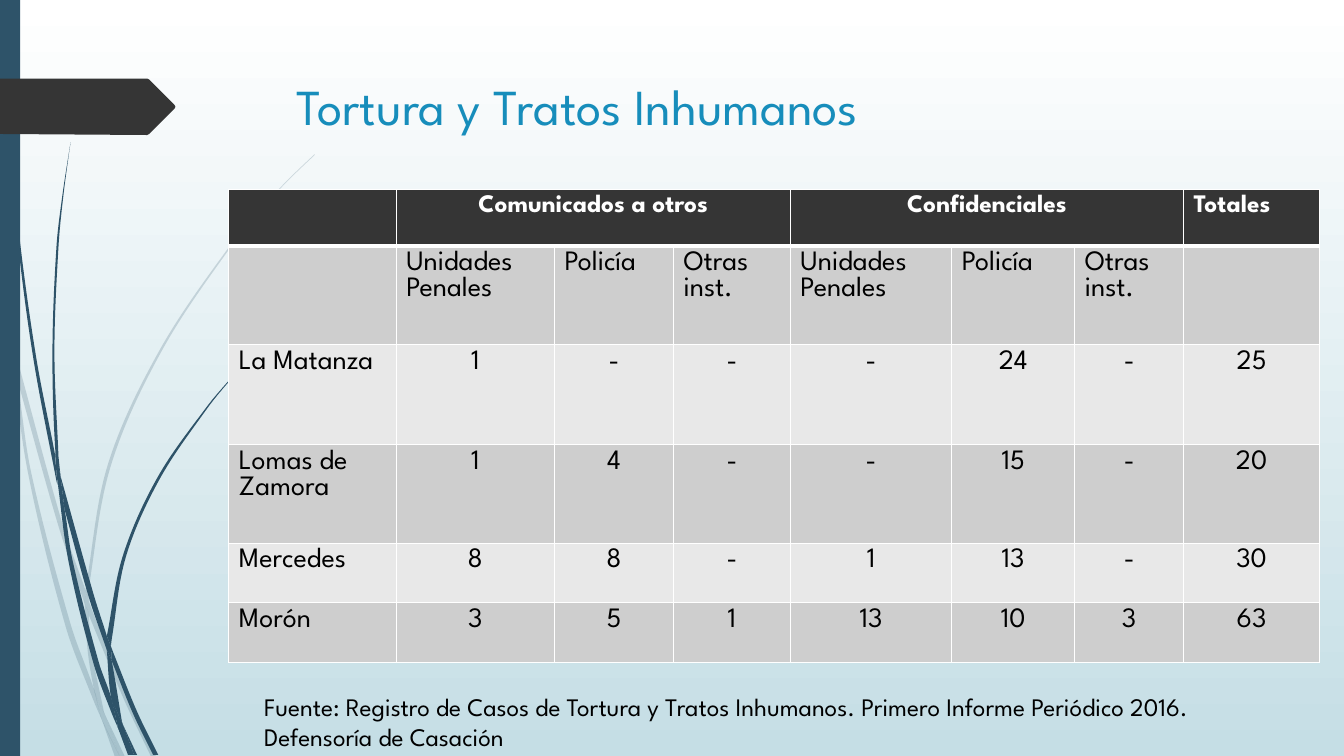
import math
import pptx
import pptx.util
import pptx.dml.color
import pptx.enum.shapes
import pptx.enum.text
import pptx.oxml
import pptx.oxml.ns

PX = 9144
FONT = "League Spartan"
SPACE = pptx.oxml.ns.nsdecls("a")
HUES = {
    "navy": "2E5369", "dark": "353535", "blue": "178DBB", "white": "FFFFFF",
    "sky": "C5DEE5", "black": "000000", "mid": "CECECE", "light": "E8E8E8",
}
PALE = [
    ([(11, 350), (9, 322), (0, 282)], [(0, 299), (10, 344), (11, 350)]),
    ([(17, 376), (58, 522), (84, 599)], [(85, 586), (62, 520), (14, 345)]),
    ([(88, 610), (123, 694), (150, 751)], [(155, 751), (127, 692), (92, 607), (88, 596)]),
    ([(105, 711), (119, 751)], [(124, 751), (105, 711)]),
    ([(11, 350), (28, 470), (65, 621), (92, 693), (101, 714)],
     [(99, 707), (93, 683), (70, 619), (31, 469), (17, 376), (11, 350)]),
    ([(84, 599), (87, 646), (93, 683), (96, 692), (105, 711)],
     [(103, 706), (91, 646), (88, 610), (88, 608), (84, 599)]),
    ([(312, 153), (289, 175), (268, 197), (228, 244), (158, 348), (107, 461), (85, 584), (85, 586)],
     [(88, 596), (88, 584), (110, 462), (160, 349), (229, 245), (268, 198), (290, 175), (312, 154)]),
    ([(101, 714), (114, 751)], [(119, 751), (101, 714)]),
    ([(85, 586), (84, 599)], [(88, 608), (88, 610)], [(88, 596), (85, 586)]),
    ([(93, 683), (99, 707), (101, 714), (119, 751)], [(105, 711), (96, 692), (93, 683)]),
]
DEEP = [
    ([(3, 0), (4, 48), (7, 110), (17, 233), (33, 355), (56, 477), (57, 481)],
     [(55, 457), (55, 453), (36, 355), (19, 232), (8, 109), (5, 48), (4, 0)]),
    ([(64, 505), (88, 592), (106, 645)], [(106, 633), (106, 631), (93, 590), (60, 472)]),
    ([(111, 656), (132, 708), (152, 749)], [(157, 749), (136, 706), (113, 649), (110, 641)]),
    ([(57, 477), (68, 557), (93, 659), (111, 708), (117, 722)],
     [(116, 717), (110, 691), (98, 657), (72, 556), (64, 505), (57, 477)]),
    ([(70, 141), (62, 193), (56, 245), (52, 349), (55, 449), (60, 472)],
     [(58, 453), (54, 349), (58, 245), (63, 193), (70, 141)]),
    ([(122, 719), (133, 749)], [(136, 749), (122, 719)]),
    ([(55, 449), (55, 453), (57, 477), (64, 505)], [(60, 472), (55, 449)]),
    ([(260, 344), (245, 358), (231, 373), (204, 405), (156, 474), (122, 551), (106, 631)],
     [(110, 641), (111, 633), (125, 552), (158, 476), (205, 406), (231, 374), (245, 359), (261, 344)]),
    ([(117, 722), (127, 749)], [(131, 749), (117, 722)]),
    ([(106, 645), (110, 691), (116, 706), (122, 719)], [(121, 716), (111, 656), (109, 651), (106, 645)]),
    ([(106, 631), (106, 645)], [(109, 651), (111, 656)], [(110, 641), (106, 631)]),
    ([(110, 691), (116, 717), (117, 722), (130, 749)], [(133, 749), (122, 719), (116, 706), (110, 691)]),
]
ARROW = [(0, 78), (146, 78), (148, 79), (173, 104), (174, 106), (173, 108), (148, 133), (146, 134), (0, 133)]
COLS = [166, 157, 118, 116, 160, 122, 108, 135]
ROWS = [56, 98, 99, 98, 59, 59]
KINDS = ["Unidades Penales", "Policía", "Otras inst."]
CELLS = [
    ["", "Comunicados a otros", "", "", "Confidenciales", "", "", "Totales"],
    ["", *KINDS, *KINDS, ""],
    ["La Matanza", "1", "-", "-", "-", "24", "-", "25"],
    ["Lomas de Zamora", "1", "4", "-", "-", "15", "-", "20"],
    ["Mercedes", "8", "8", "-", "1", "13", "-", "30"],
    ["Morón", "3", "5", "1", "13", "10", "3", "63"],
]


def px(*sizes):
    return [pptx.util.Emu(size * PX) for size in sizes]


def hue(name):
    return pptx.dml.color.RGBColor.from_string(HUES[name])


def paint(shape, name, alpha=100):
    shape.shadow.inherit = False
    shape.fill.solid()
    shape.fill.fore_color.rgb = hue(name)
    shape.line.fill.background()
    if alpha < 100:
        tint = shape._element.spPr.find(pptx.oxml.ns.qn("a:solidFill"))[0]
        tint.append(pptx.oxml.parse_xml(f'<a:alpha {SPACE} val="{alpha * 1000}"/>'))


def write(frame, text, size, lead, name, bold=False, center=False):
    para = frame.paragraphs[0]
    para.line_spacing = pptx.util.Pt(lead)
    align = pptx.enum.text.PP_ALIGN
    para.alignment = align.CENTER if center else align.LEFT
    run = para.add_run()
    run.text = text
    run.font.name = FONT
    run.font.size = pptx.util.Pt(size)
    run.font.bold = bold
    run.font.color.rgb = hue(name)


def lean(spot, back, front, reach):
    span = math.dist(back, front) or 1
    return [s + (f - b) / span * reach / 3 for s, b, f in zip(spot, back, front)]


def bend(side):
    ends = [side[0], *side, side[-1]]
    for a, b, c, d in zip(ends, ends[1:], ends[2:], ends[3:]):
        reach = math.dist(b, c)
        yield lean(b, a, c, reach), lean(c, d, b, reach), c


def add_form(slide, sides, name, alpha=100):
    knots = [knot for side in sides for knot in side]
    draft = slide.shapes.build_freeform(*px(*knots[0]))
    draft.add_line_segments([px(*knot) for knot in knots[1:]], close=True)
    shape = draft.convert_to_shape()
    paint(shape, name, alpha)
    low = [min(axis) for axis in zip(*knots)]
    lines = iter(shape._element.findall(".//" + pptx.oxml.ns.qn("a:lnTo")))
    for i, side in enumerate(sides):
        if i:
            next(lines)
        for curve in bend(side):
            spots = "".join(
                f'<a:pt x="{round((x - low[0]) * PX)}" y="{round((y - low[1]) * PX)}"/>'
                for x, y in curve)
            line = next(lines)
            line.getparent().replace(
                line, pptx.oxml.parse_xml(f"<a:cubicBezTo {SPACE}>{spots}</a:cubicBezTo>"))


def add_back(slide):
    fill = slide.background.fill
    fill.gradient()
    fill.gradient_angle = 270
    for stop, name, place in zip(fill.gradient_stops, ("white", "sky"), (0, 1)):
        stop.color.rgb = hue(name)
        stop.position = place


def set_title(slide, text, box):
    title = slide.shapes.title
    title.left, title.top, title.width, title.height = px(*box)
    frame = title.text_frame
    frame.auto_size = pptx.enum.text.MSO_AUTO_SIZE.NONE
    frame.vertical_anchor = pptx.enum.text.MSO_ANCHOR.TOP
    write(frame, text, 36, 44, "blue")


def edge(cell, row):
    sides = {"L": 1, "R": 1, "T": 3 if row == 1 else 1, "B": 3 if row == 0 else 1}
    props = cell._tc.get_or_add_tcPr()
    for i, (side, wide) in enumerate(sides.items()):
        props.insert(i, pptx.oxml.parse_xml(
            f'<a:ln{side} {SPACE} w="{wide * 12700}"><a:solidFill>'
            f'<a:srgbClr val="{HUES["white"]}"/></a:solidFill></a:ln{side}>'))


def add_grid(slide, left, top):
    box = px(left, top, sum(COLS), sum(ROWS))
    grid = slide.shapes.add_table(len(ROWS), len(COLS), *box).table
    for col, wide in zip(grid.columns, px(*COLS)):
        col.width = wide
    for row, high in zip(grid.rows, px(*ROWS)):
        row.height = high
    for first in (1, 4):
        grid.cell(0, first).merge(grid.cell(0, first + 2))
    for i, line in enumerate(CELLS):
        for j, text in enumerate(line):
            cell = grid.cell(i, j)
            cell.fill.solid()
            cell.fill.fore_color.rgb = hue("dark" if i == 0 else "mid" if i % 2 else "light")
            edge(cell, i)
            if text and i == 0:
                write(cell.text_frame, text, 18, 16.5, "white", True, j < 7)
            elif text:
                write(cell.text_frame, text, 20, 18.5, "black", center=i > 1 and j > 0)


def add_note(slide, text, box):
    frame = slide.shapes.add_textbox(*px(*box)).text_frame
    frame.word_wrap = True
    write(frame, text, 18, 22, "black")


def main():
    deck = pptx.Presentation()
    deck.slide_width, deck.slide_height = px(1333, 750)
    slide = deck.slides.add_slide(deck.slide_layouts[5])
    add_back(slide)
    for alpha, group in ((20, PALE), (100, DEEP)):
        for sides in group:
            add_form(slide, sides, "navy", alpha)
    bar = slide.shapes.add_shape(pptx.enum.shapes.MSO_SHAPE.RECTANGLE, *px(0, 0, 20, 750))
    paint(bar, "navy")
    add_form(slide, [[knot] for knot in ARROW], "dark")
    set_title(slide, "Tortura y Tratos Inhumanos", (284, 68, 975, 140))
    add_grid(slide, 227, 188)
    add_note(slide, "Fuente: Registro de Casos de Tortura y Tratos Inhumanos. "
             "Primero Informe Periódico 2016. Defensoría de Casación", (252, 680, 1041, 70))
    deck.save("out.pptx")


if __name__ == "__main__":
    main()
